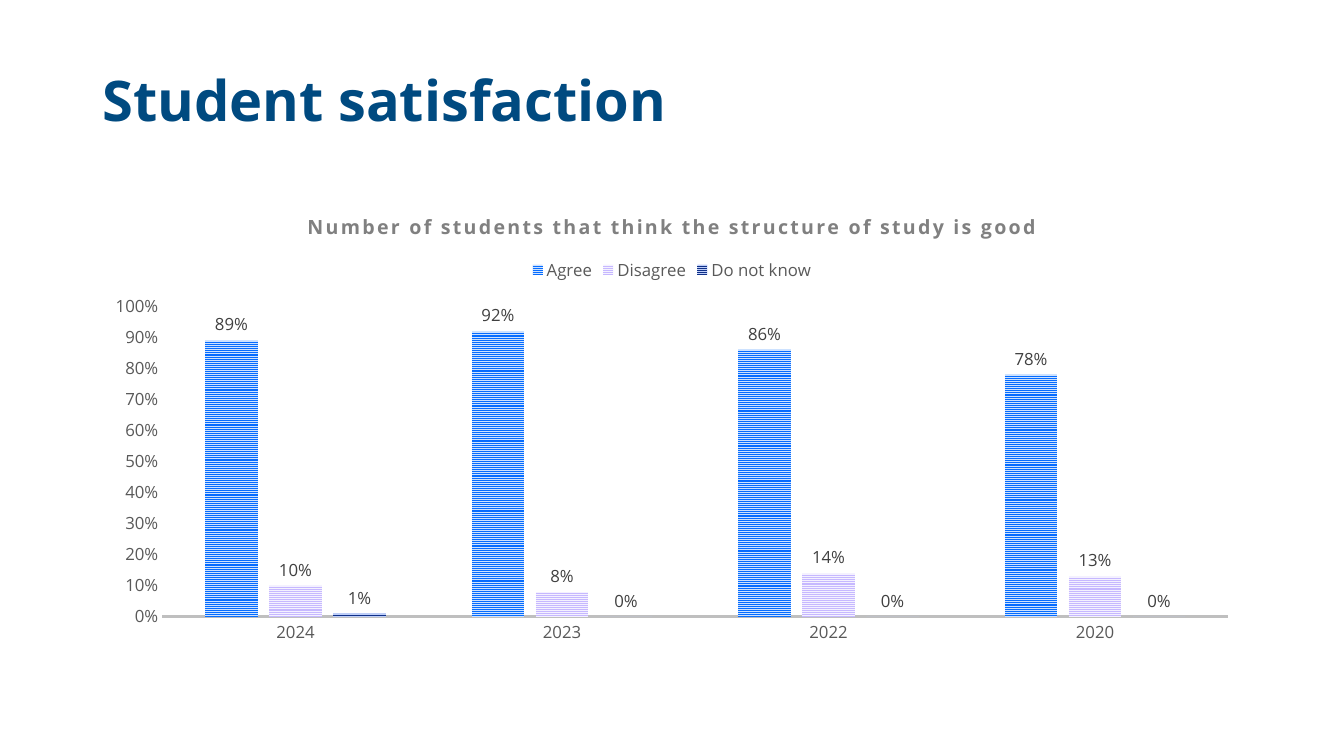
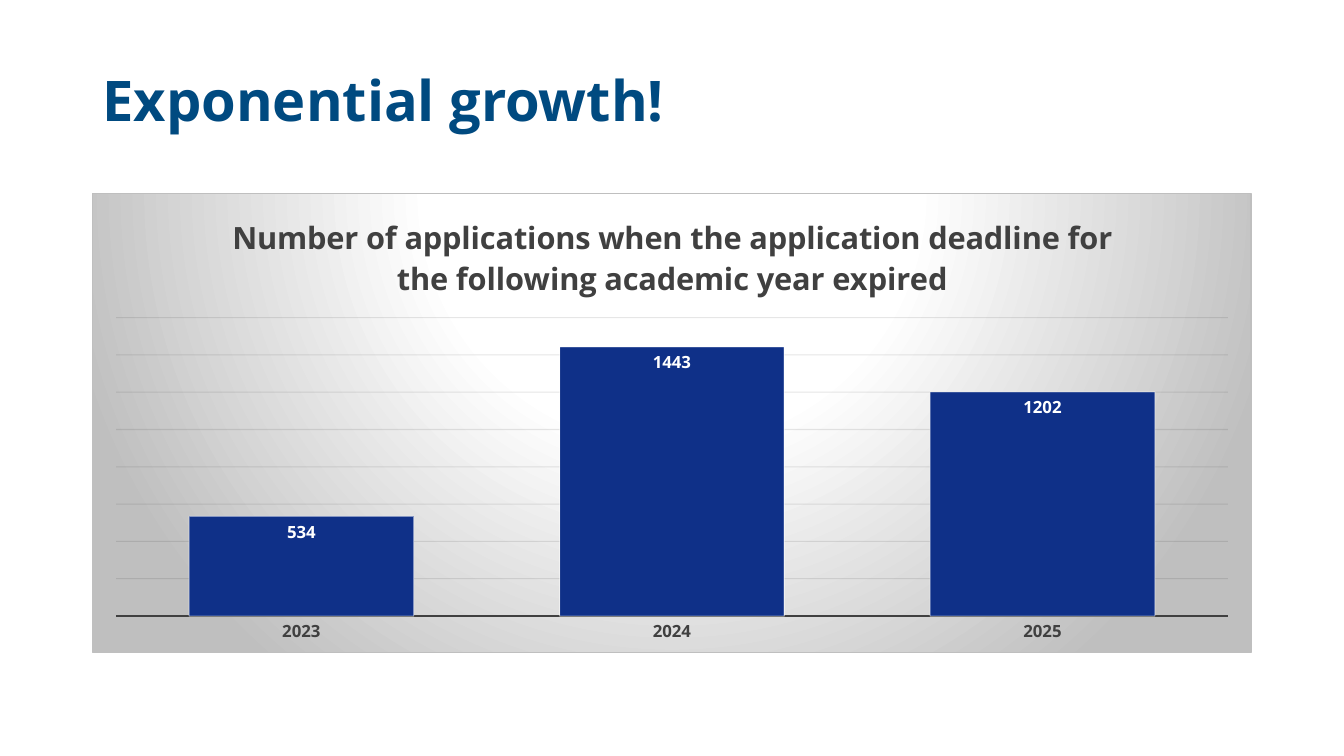
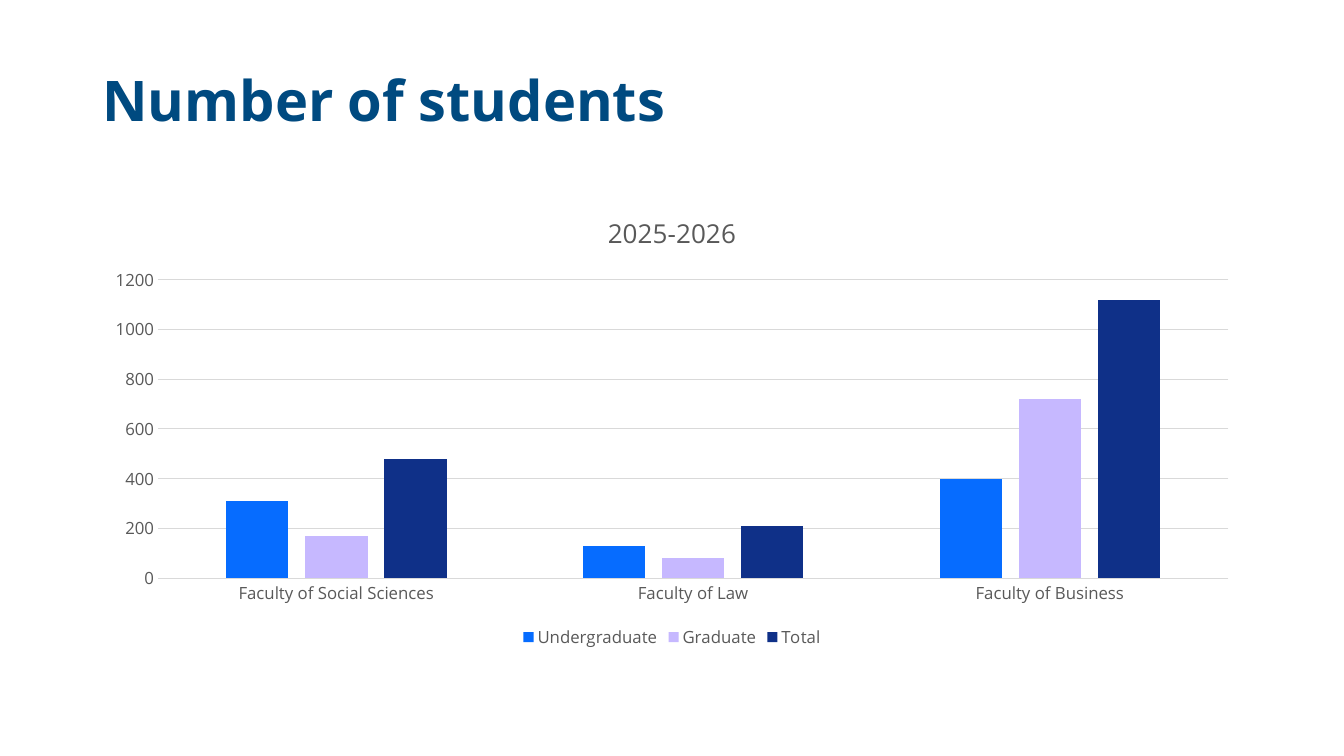
from lxml.etree import SubElement
from pptx import Presentation
from pptx.chart.data import CategoryChartData
from pptx.dml.color import RGBColor
from pptx.enum.chart import XL_CHART_TYPE, XL_LABEL_POSITION as LabelPos
from pptx.enum.chart import XL_LEGEND_POSITION as LegendPos, XL_TICK_MARK
from pptx.enum.dml import MSO_PATTERN
from pptx.enum.text import MSO_ANCHOR, MSO_AUTO_SIZE, PP_ALIGN
from pptx.oxml import parse_xml
from pptx.oxml.ns import nsdecls, qn
from pptx.util import Cm, Pt

FONT = "Open Sans"
TITLE_BLUE = RGBColor(0x00, 0x4A, 0x80)
BLUE = RGBColor(0x06, 0x6C, 0xFF)
LILAC = RGBColor(0xC6, 0xB8, 0xFF)
NAVY = RGBColor(0x0F, 0x30, 0x88)
PALE_BLUE = RGBColor(0xCD, 0xE2, 0xFF)
PALE_LILAC = RGBColor(0xF4, 0xF1, 0xFF)
PALE_NAVY = RGBColor(0xBE, 0xCE, 0xF8)
BLACK = RGBColor(0x00, 0x00, 0x00)
NEAR_BLACK = RGBColor(0x0D, 0x0D, 0x0D)
DARK_GREY = RGBColor(0x40, 0x40, 0x40)
TEXT_GREY = RGBColor(0x59, 0x59, 0x59)
MID_GREY = RGBColor(0x80, 0x80, 0x80)
SILVER = RGBColor(0xBF, 0xBF, 0xBF)
LIGHT_GREY = RGBColor(0xD9, 0xD9, 0xD9)
WHITE = RGBColor(0xFF, 0xFF, 0xFF)

TITLE_BOX = Cm(2.33), Cm(0.76), Cm(29.21), Cm(3.68)
CHART_BOX = Cm(2.33), Cm(4.87), Cm(29.21), Cm(11.58)


def style_font(font, size, color, bold=False):
    font.name = FONT
    font.size = Pt(size)
    font.bold = bold
    font.color.rgb = color


def style_line(line, color, width, opacity=100):
    line.color.rgb = color
    line.width = Pt(width)
    if opacity < 100:
        rgb = line._get_or_add_ln().find(".//" + qn("a:srgbClr"))
        SubElement(rgb, qn("a:alpha"), val=str(opacity * 1000))


def add_titled_slide(prs, text, box):
    s = prs.slides.add_slide(prs.slide_layouts[5])
    title = s.shapes.title
    title.left, title.top, title.width, title.height = box
    tf = title.text_frame
    tf.text = text
    tf.word_wrap = True
    tf.auto_size = MSO_AUTO_SIZE.NONE
    tf.vertical_anchor = MSO_ANCHOR.MIDDLE
    p = tf.paragraphs[0]
    p.alignment = PP_ALIGN.LEFT
    p.line_spacing = 0.9
    style_font(p.font, 40, TITLE_BLUE, True)
    return s


def add_column_chart(s, box, categories, series, gap, overlap=0, number_format="General"):
    data = CategoryChartData(number_format=number_format)
    data.categories = categories
    for name, values in series:
        data.add_series(name, values)
    chart = s.shapes.add_chart(XL_CHART_TYPE.COLUMN_CLUSTERED, *box, data).chart
    style_font(chart.font, 10, BLACK)
    plot = chart.plots[0]
    plot.gap_width = gap
    plot.overlap = overlap
    plot.vary_by_categories = False
    chart.has_legend = False
    return chart


def set_chart_title(chart, text, size, color, bold=False, spacing=0):
    chart.has_title = True
    chart.chart_title.include_in_layout = False
    tf = chart.chart_title.text_frame
    tf.text = text
    p = tf.paragraphs[0]
    style_font(p.font, size, color, bold)
    if spacing:
        p.runs[0].font._element.set("spc", str(spacing))


def set_category_axis(chart, line_color, line_width, text_color=TEXT_GREY, bold=False):
    axis = chart.category_axis
    axis.major_tick_mark = axis.minor_tick_mark = XL_TICK_MARK.NONE
    style_font(axis.tick_labels.font, 12, text_color, bold)
    style_line(axis.format.line, line_color, line_width)


def set_value_axis(chart, maximum, step, number_format="General"):
    axis = chart.value_axis
    axis.minimum_scale, axis.maximum_scale, axis.major_unit = 0, maximum, step
    axis.major_tick_mark = axis.minor_tick_mark = XL_TICK_MARK.NONE
    axis.has_major_gridlines = False
    axis.format.line.fill.background()
    style_font(axis.tick_labels.font, 12, TEXT_GREY)
    axis.tick_labels.number_format = number_format
    axis.tick_labels.number_format_is_linked = False


def set_gridlines(chart, color, opacity=100):
    axis = chart.value_axis
    axis.has_major_gridlines = True
    style_line(axis.major_gridlines.format.line, color, 0.75, opacity)


def set_legend(chart, position):
    chart.has_legend = True
    chart.legend.position = position
    chart.legend.include_in_layout = False
    style_font(chart.legend.font, 12, TEXT_GREY)


def set_labels(series, position, color, bold=False):
    labels = series.data_labels
    labels.show_value = True
    labels.position = position
    style_font(labels.font, 12, color, bold)


def fill_solid(series, color):
    series.format.fill.solid()
    series.format.fill.fore_color.rgb = color


def fill_striped(series, color, back):
    fill = series.format.fill
    fill.patterned()
    fill.pattern = MSO_PATTERN.NARROW_HORIZONTAL
    fill.fore_color.rgb = color
    fill.back_color.rgb = back


def set_radial_background(chart):
    stops = "".join(
        f'<a:gs pos="{pos * 1000}"><a:srgbClr val="{color}"/></a:gs>'
        for pos, color in ((0, WHITE), (39, WHITE), (100, SILVER)))
    background = parse_xml(
        f'<c:spPr {nsdecls("c", "a")}><a:gradFill><a:gsLst>{stops}</a:gsLst>'
        '<a:path path="circle"><a:fillToRect l="50000" t="-80000" r="50000" b="180000"/>'
        f'</a:path></a:gradFill><a:ln w="{Pt(0.75)}"><a:solidFill>'
        f'<a:srgbClr val="{SILVER}"/></a:solidFill></a:ln></c:spPr>')
    chart._chartSpace.find(qn("c:chart")).addnext(background)


def satisfaction_slide(prs):
    s = add_titled_slide(prs, "Student satisfaction", TITLE_BOX)
    chart = add_column_chart(
        s, CHART_BOX, ["2024", "2023", "2022", "2020"],
        [("Agree", (0.89, 0.92, 0.86, 0.78)),
         ("Disagree", (0.1, 0.08, 0.14, 0.13)),
         ("Do not know", (0.01, 0, 0, 0))],
        gap=164, overlap=-22, number_format="0%")
    set_chart_title(chart, "Number of students that think the structure of study is good",
                    14, MID_GREY, True, spacing=150)
    set_category_axis(chart, SILVER, 1.5)
    set_value_axis(chart, 1, 0.1, "0%")
    set_legend(chart, LegendPos.TOP)
    stripes = (BLUE, PALE_BLUE), (LILAC, PALE_LILAC), (NAVY, PALE_NAVY)
    for series, colors in zip(chart.plots[0].series, stripes):
        fill_striped(series, *colors)
        set_labels(series, LabelPos.OUTSIDE_END, DARK_GREY)


def growth_slide(prs):
    s = add_titled_slide(prs, "Exponential growth!", TITLE_BOX)
    chart = add_column_chart(s, CHART_BOX, ["2023", "2024", "2025"],
                             [("Series 1", (534, 1443, 1202))], gap=65)
    set_chart_title(chart, "Number of applications when the application deadline for "
                    "the following academic year expired", 22, DARK_GREY, True)
    set_category_axis(chart, DARK_GREY, 1.5, DARK_GREY, True)
    set_value_axis(chart, 1600, 200)
    chart.value_axis.visible = False
    set_gridlines(chart, NEAR_BLACK, opacity=10)
    set_radial_background(chart)
    series = chart.plots[0].series[0]
    fill_solid(series, NAVY)
    style_line(series.format.line, WHITE, 0.75, opacity=50)
    set_labels(series, LabelPos.INSIDE_END, WHITE, True)


def students_slide(prs):
    s = add_titled_slide(prs, "Number of students", TITLE_BOX)
    chart = add_column_chart(
        s, CHART_BOX,
        ["Faculty of Social Sciences", "Faculty of Law", "Faculty of Business"],
        [("Undergraduate", (310, 130, 400)),
         ("Graduate", (170, 80, 720)),
         ("Total", (480, 210, 1120))],
        gap=219, overlap=-27)
    set_chart_title(chart, "2025-2026", 18.6, TEXT_GREY)
    set_category_axis(chart, LIGHT_GREY, 0.75)
    set_value_axis(chart, 1200, 200)
    set_gridlines(chart, LIGHT_GREY)
    set_legend(chart, LegendPos.BOTTOM)
    for series, color in zip(chart.plots[0].series, (BLUE, LILAC, NAVY)):
        fill_solid(series, color)


def main():
    prs = Presentation()
    prs.slide_width, prs.slide_height = Cm(33.87), Cm(19.05)
    satisfaction_slide(prs)
    growth_slide(prs)
    students_slide(prs)
    prs.save("out.pptx")


if __name__ == "__main__":
    main()
